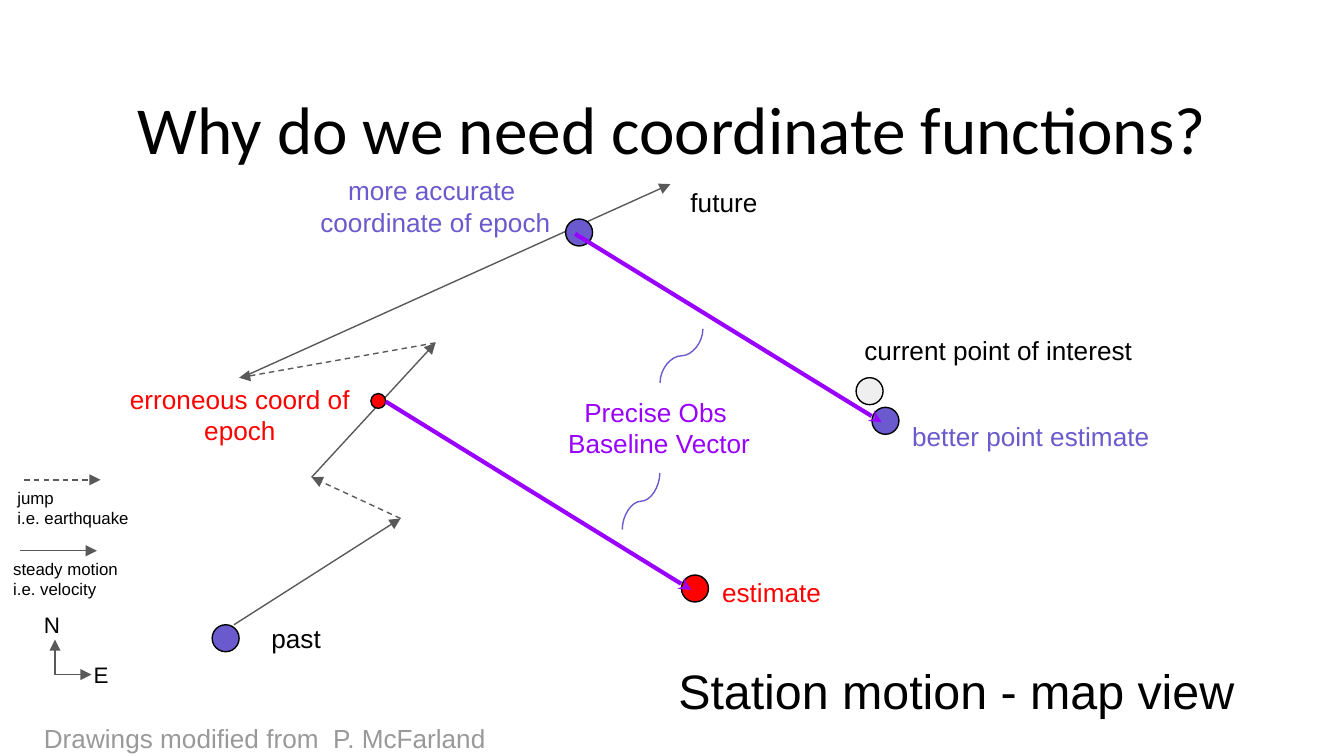
"""Build the station motion slide: a map view of why coordinate functions are needed."""
from dataclasses import dataclass

from lxml import etree
from pptx import Presentation
from pptx import util as u
from pptx.dml.color import RGBColor
from pptx.enum import dml, shapes, text
from pptx.oxml.ns import qn

BLACK, GREY, PALE = "000000", "595959", "EFEFEF"
RED, SLATE, PURPLE = "FF0000", "6A5ACD", "9900FF"


@dataclass
class Label:
    words: str
    left: float
    top: float
    width: float
    height: float = 1.12
    size: float = 14
    hue: str = BLACK
    centred: bool = False
    middle: bool = False
    spacing: float = 1.0
    font: str = "Arial"


@dataclass
class Dot:
    left: float
    top: float
    hue: str
    size: float = 0.51


@dataclass
class Arrow:
    start: tuple[float, float]
    end: tuple[float, float]
    dashed: bool = False
    hue: str = GREY
    weight: float = 0.75
    head: str = "triangle"


@dataclass
class Squiggle:
    left: float
    top: float
    width: float
    height: float
    turn: int


PAST, JUMP_1, LANDING_1 = (4.42, 11.81), (7.57, 9.8), (5.89, 9.02)
JUMP_2, LANDING_2 = (8.23, 6.48), (4.52, 7.14)
ORIGIN = (1.04, 12.75)

MOTIONS = [
    Arrow(ORIGIN, (1.04, 12.09)),
    Arrow(ORIGIN, (1.73, 12.75)),
    Arrow(PAST, JUMP_1),
    Arrow(JUMP_1, LANDING_1, dashed=True),
    Arrow(LANDING_1, JUMP_2),
    Arrow(JUMP_2, LANDING_2, dashed=True),
    Arrow((4.67, 7.09), (12.67, 3.48)),
    Arrow((0.38, 10.41), (1.83, 10.41)),
    Arrow((0.46, 9.07), (1.9, 9.07), dashed=True),
]
BASELINES = [
    Arrow((10.87, 4.42), (16.66, 7.98), hue=PURPLE, weight=2.25, head="stealth"),
    Arrow((7.29, 7.59), (13.06, 11.15), hue=PURPLE, weight=2.25, head="stealth"),
]
DOTS = [
    Dot(16.48, 7.7, SLATE),
    Dot(12.88, 10.87, RED),
    Dot(16.18, 7.14, PALE),
    Dot(7.01, 7.44, RED, size=0.28),
    Dot(10.69, 4.14, SLATE),
    Dot(4.01, 11.81, SLATE),
]
SQUIGGLES = [
    Squiggle(12.37, 6.32, 1.02, 0.81, turn=270),
    Squiggle(11.58, 9.12, 1.07, 0.71, turn=90),
]
LABELS = [
    Label("Why do we need coordinate functions?", 1.27, 1.22, 22.86, 2.39,
          size=36, centred=True, middle=True, font="Calibri"),
    Label("N", 0.58, 11.3, 0.94, 1.02, size=12),
    Label("E", 1.52, 12.24, 0.94, 1.02, size=12),
    Label("steady motion\ni.e. velocity", 0, 10.31, 2.8, 1.27, size=9),
    Label("jump\ni.e. earthquake", 0.08, 8.97, 2.8, 1.27, size=9),
    Label("Station motion - map view", 12.57, 12.32, 11.86, 1.6,
          size=25.9, middle=True, spacing=0.9),
    Label("Precise Obs \nBaseline Vector", 9.96, 7.24, 5, 1.7, hue=PURPLE, centred=True),
    Label(" estimate", 13.26, 10.64, 11.76, hue=RED),
    Label("better point estimate", 16.99, 7.7, 8.4, hue=SLATE),
    Label("more accurate \ncoordinate of epoch", 3.99, 3.05, 8.48, 1.7,
          hue=SLATE, centred=True),
    Label("erroneous coord of epoch", 1.65, 6.99, 5.77, 1.7, hue=RED, centred=True),
    Label("current point of interest", 15.39, 6.07, 6.96, centred=True),
    Label("future", 12.8, 3.28, 2.49),
    Label("past", 4.88, 11.51, 1.68),
    Label("Drawings modified from  P. McFarland", 0.58, 13.41, 9.96, 0.88, hue="999999"),
]


def paint(colour_format, hue: str) -> None:
    """Give a fill or a font the colour of a hex string."""
    if hasattr(colour_format, "solid"):
        colour_format.solid()
        colour_format = colour_format.fore_color
    else:
        colour_format = colour_format.color
    colour_format.rgb = RGBColor.from_string(hue)


def write(box, words: str, *, size: float, hue: str, font: str, centred: bool,
          spacing: float) -> None:
    """Fill a text box with one paragraph per line of text."""
    frame = box.text_frame
    for index, line in enumerate(words.split("\n")):
        para = frame.add_paragraph() if index else frame.paragraphs[0]
        para.alignment = text.PP_ALIGN.CENTER if centred else text.PP_ALIGN.LEFT
        para.line_spacing = spacing
        span = para.add_run()
        span.text = line
        span.font.size = u.Pt(size)
        span.font.name = font
        paint(span.font, hue)


def draw_label(page, label: Label) -> None:
    """Draw a text box."""
    box = page.shapes.add_textbox(
        u.Cm(label.left), u.Cm(label.top), u.Cm(label.width), u.Cm(label.height))
    frame = box.text_frame
    frame.word_wrap = True
    frame.margin_left = frame.margin_right = u.Cm(0.25)
    frame.margin_top = frame.margin_bottom = u.Cm(0.25)
    frame.vertical_anchor = text.MSO_ANCHOR.MIDDLE if label.middle else text.MSO_ANCHOR.TOP
    write(box, label.words, size=label.size, hue=label.hue, font=label.font,
          centred=label.centred, spacing=label.spacing)


def draw_dot(page, dot: Dot) -> None:
    """Draw a station point."""
    circle = page.shapes.add_shape(
        shapes.MSO_SHAPE.OVAL, u.Cm(dot.left), u.Cm(dot.top), u.Cm(dot.size), u.Cm(dot.size))
    circle.shadow.inherit = False
    paint(circle.fill, dot.hue)
    paint(circle.line.fill, BLACK)
    circle.line.width = u.Pt(0.75)


def add_line(page, kind, start: tuple, end: tuple, hue: str, weight: float):
    """Add a connector without shadow between two points."""
    line = page.shapes.add_connector(kind, *(u.Cm(value) for value in (*start, *end)))
    paint(line.line.fill, hue)
    line.line.width = u.Pt(weight)
    etree.SubElement(line._element.spPr, qn("a:effectLst"))
    return line


def draw_arrow(page, arrow: Arrow) -> None:
    """Draw a straight arrow with its head at the end."""
    line = add_line(page, shapes.MSO_CONNECTOR.STRAIGHT, arrow.start, arrow.end,
                    arrow.hue, arrow.weight)
    if arrow.dashed:
        line.line.dash_style = dml.MSO_LINE.DASH
    etree.SubElement(line.line._get_or_add_ln(), qn("a:tailEnd"), type=arrow.head)


def draw_squiggle(page, curve: Squiggle) -> None:
    """Draw a turned curved connector."""
    line = add_line(page, shapes.MSO_CONNECTOR.CURVE, (curve.left, curve.top),
                    (curve.left + curve.width, curve.top + curve.height), SLATE, 0.75)
    line._element.spPr.find(qn("a:xfrm")).set("rot", str(curve.turn * 60000))


def main() -> None:
    """Build and save the deck."""
    deck = Presentation()
    deck.slide_width, deck.slide_height = u.Cm(25.4), u.Cm(14.29)
    page = deck.slides.add_slide(deck.slide_layouts[6])
    for draw, items in ((draw_arrow, MOTIONS), (draw_dot, DOTS), (draw_label, LABELS),
                        (draw_arrow, BASELINES), (draw_squiggle, SQUIGGLES)):
        for item in items:
            draw(page, item)
    deck.save("out.pptx")


if __name__ == "__main__":
    main()
